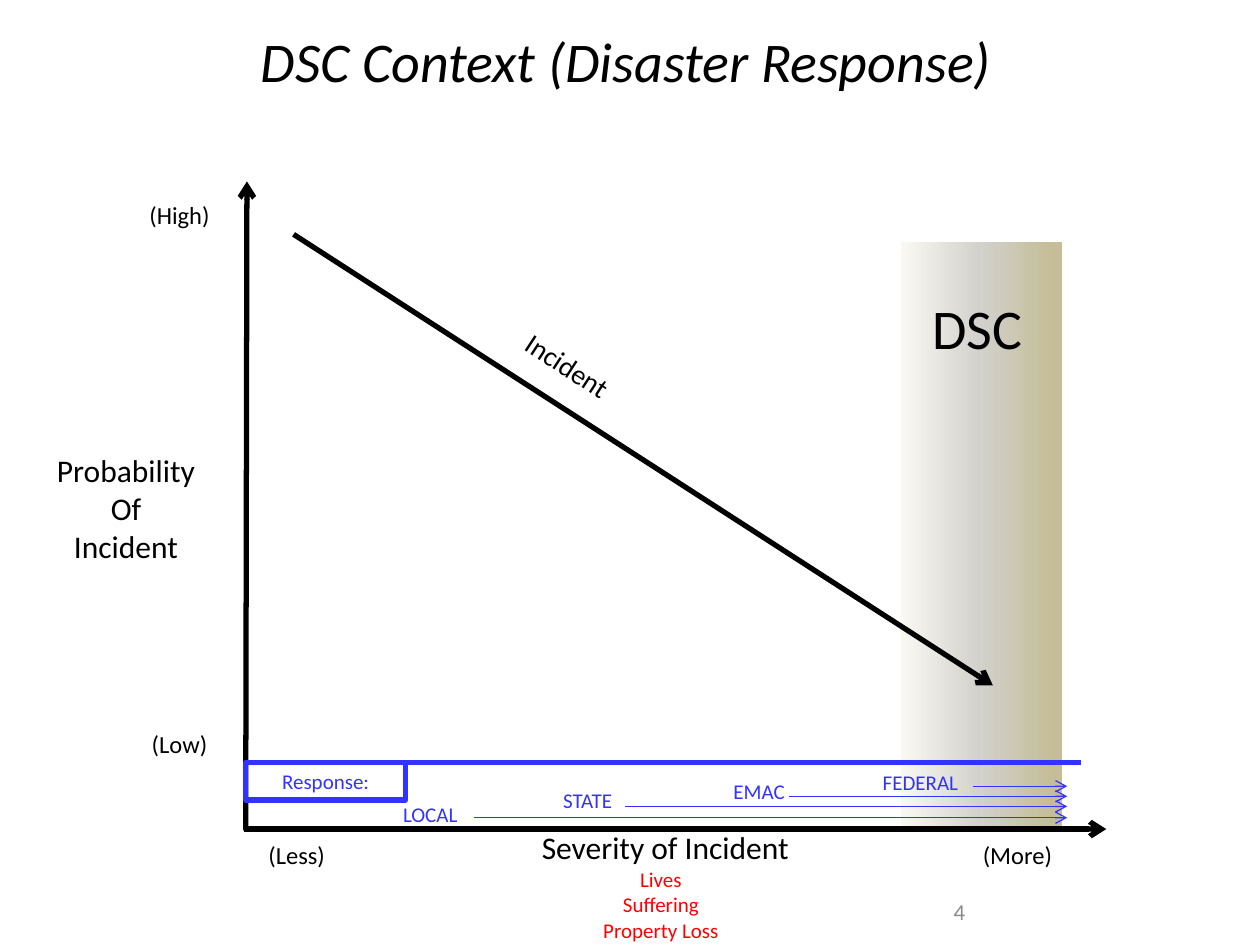
from lxml import etree
from pptx import Presentation
from pptx.dml.color import RGBColor
from pptx.enum import shapes, text
from pptx.oxml.ns import qn
from pptx.util import Inches, Pt

FONT = "Calibri"
BLACK, BLUE, RED, GREY = "000000", "3333FF", "FF0000", "8C8C8C"
CENTER, LEFT = text.PP_ALIGN.CENTER, text.PP_ALIGN.LEFT


def color(value):
    return RGBColor.from_string(value)


def write(frame, lines, size, ink, align=CENTER, italic=False):
    """Fill a text frame with one paragraph per line."""
    for index, line in enumerate(lines):
        para = frame.paragraphs[0] if index == 0 else frame.add_paragraph()
        para.alignment = align
        span = para.add_run()
        span.text = line
        span.font.name = FONT
        span.font.size = Pt(size)
        span.font.italic = italic
        span.font.color.rgb = color(ink)


def add_title(page, words):
    title = page.shapes.title
    title.left, title.top = Inches(0.69), Inches(0.17)
    title.width, title.height = Inches(8.56), Inches(0.61)
    title.text_frame.vertical_anchor = text.MSO_ANCHOR.MIDDLE
    write(title.text_frame, [words], 32, BLACK, italic=True)


def add_label(page, lines, at, size, ink=BLACK, align=CENTER, turn=0):
    box = page.shapes.add_textbox(*map(Inches, at))
    box.rotation = turn
    frame = box.text_frame
    frame.word_wrap = True
    frame.auto_size = text.MSO_AUTO_SIZE.SHAPE_TO_FIT_TEXT
    write(frame, lines, size, ink, align)
    return box


def add_rectangle(page, at):
    box = page.shapes.add_shape(shapes.MSO_SHAPE.RECTANGLE, *map(Inches, at))
    box.shadow.inherit = False
    return box


def set_gradient(box, stops, angle):
    """Give a shape a linear gradient of any number of stops."""
    box.fill.gradient()
    box.fill.gradient_angle = angle
    stop_list = box._element.spPr.find(qn("a:gradFill")).find(qn("a:gsLst"))
    for old in list(stop_list):
        stop_list.remove(old)
    for percent, value in stops:
        stop = etree.SubElement(stop_list, qn("a:gs"), pos=str(percent * 1000))
        etree.SubElement(stop, qn("a:srgbClr"), val=value)


def add_line(page, start, end, ink, width, arrow=True):
    line = page.shapes.add_connector(
        shapes.MSO_CONNECTOR.STRAIGHT, *map(Inches, start + end))
    line.line.color.rgb = color(ink)
    line.line.width = Pt(width)
    if arrow:
        etree.SubElement(line.line._get_or_add_ln(), qn("a:tailEnd"), type="arrow")
    etree.SubElement(line._element.spPr, qn("a:effectLst"))


def add_axes(page):
    add_line(page, (1.95, 6.59), (1.96, 1.44), BLACK, 3)
    add_line(page, (1.94, 6.58), (8.78, 6.58), BLACK, 3)
    add_label(page, ["Probability", "Of", "Incident"], (0.01, 3.53, 1.98, 1.11), 18)
    add_label(page, ["Severity of Incident"], (3.67, 6.52, 3.22, 0.44), 18)
    add_label(page, ["Lives", "Suffering", "Property Loss"],
              (4.57, 6.83, 1.35, 0.71), 12, RED)
    for words, left, top in (("(Low)", 0.79, 5.74), ("(High)", 0.79, 1.54),
                             ("(Less)", 1.72, 6.62), ("(More)", 7.44, 6.62)):
        add_label(page, [words], (left, top, 1.27, 0.34), 14)


def add_responses(page):
    # Heading box and the rule along its top edge
    box = add_rectangle(page, (1.95, 6.05, 1.27, 0.3))
    box.fill.background()
    box.line.color.rgb = color(BLUE)
    box.line.width = Pt(3)
    box.text_frame.vertical_anchor = text.MSO_ANCHOR.TOP
    write(box.text_frame, ["Response:"], 12, BLUE)
    add_line(page, (1.95, 6.05), (8.58, 6.05), BLUE, 3, arrow=False)

    # Each level of response: label position, then arrow start and height
    levels = (("LOCAL", 2.78, 6.31, 3.76, 6.49),
              ("STATE", 4.03, 6.2, 4.96, 6.4),
              ("EMAC", 5.39, 6.13, 6.26, 6.32),
              ("FEDERAL", 6.67, 6.06, 7.72, 6.24))
    for words, left, top, start, height in levels:
        add_label(page, [words], (left, top, 1.27, 0.3), 12, BLUE)
        add_line(page, (start, height), (8.47, height), BLUE, 0.75)


def main():
    deck = Presentation()
    deck.slide_width, deck.slide_height = Inches(10), Inches(7.5)
    page = deck.slides.add_slide(deck.slide_layouts[5])

    # Page number
    number = add_label(page, ["4"], (7.47, 6.97, 2.33, 0.52), 13, GREY, LEFT)
    number.text_frame.auto_size = text.MSO_AUTO_SIZE.NONE
    number.text_frame.vertical_anchor = text.MSO_ANCHOR.MIDDLE

    # Shaded DSC zone
    zone = add_rectangle(page, (7.15, 1.92, 1.28, 4.65))
    set_gradient(zone, ((6, "C4BD97"), (50, "D2D1CC"), (100, "F9F8F3")), 180)
    zone.line.fill.background()

    add_title(page, "DSC Context (Disaster Response)")
    add_axes(page)

    # Falling incident curve
    add_line(page, (2.33, 1.86), (7.88, 5.44), BLACK, 3)
    add_label(page, ["Incident"], (4.02, 2.78, 1.16, 0.37), 16, align=LEFT, turn=33.2)
    add_label(page, ["DSC"], (7.12, 2.28, 1.27, 0.64), 32)

    add_responses(page)
    deck.save("out.pptx")


if __name__ == "__main__":
    main()
